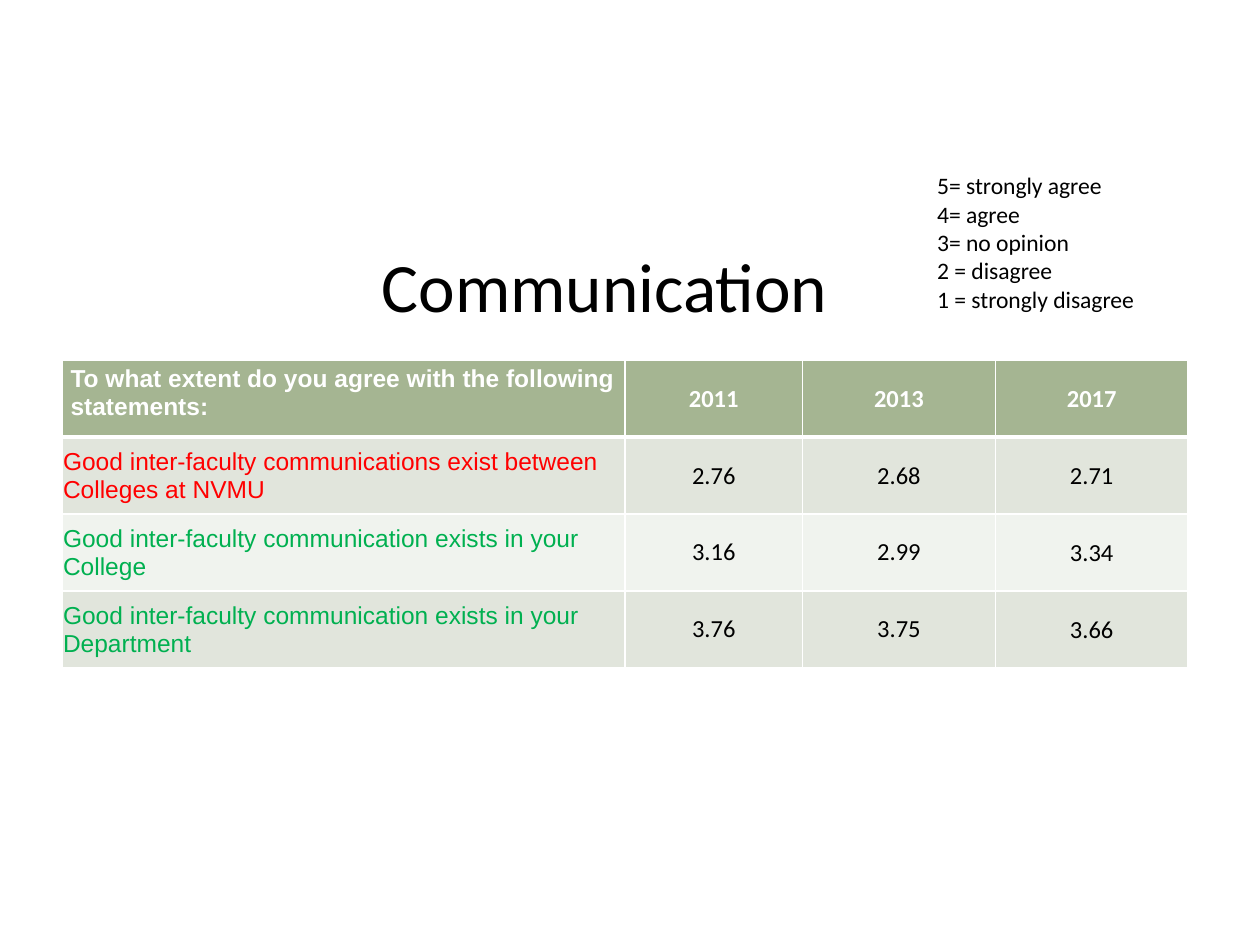
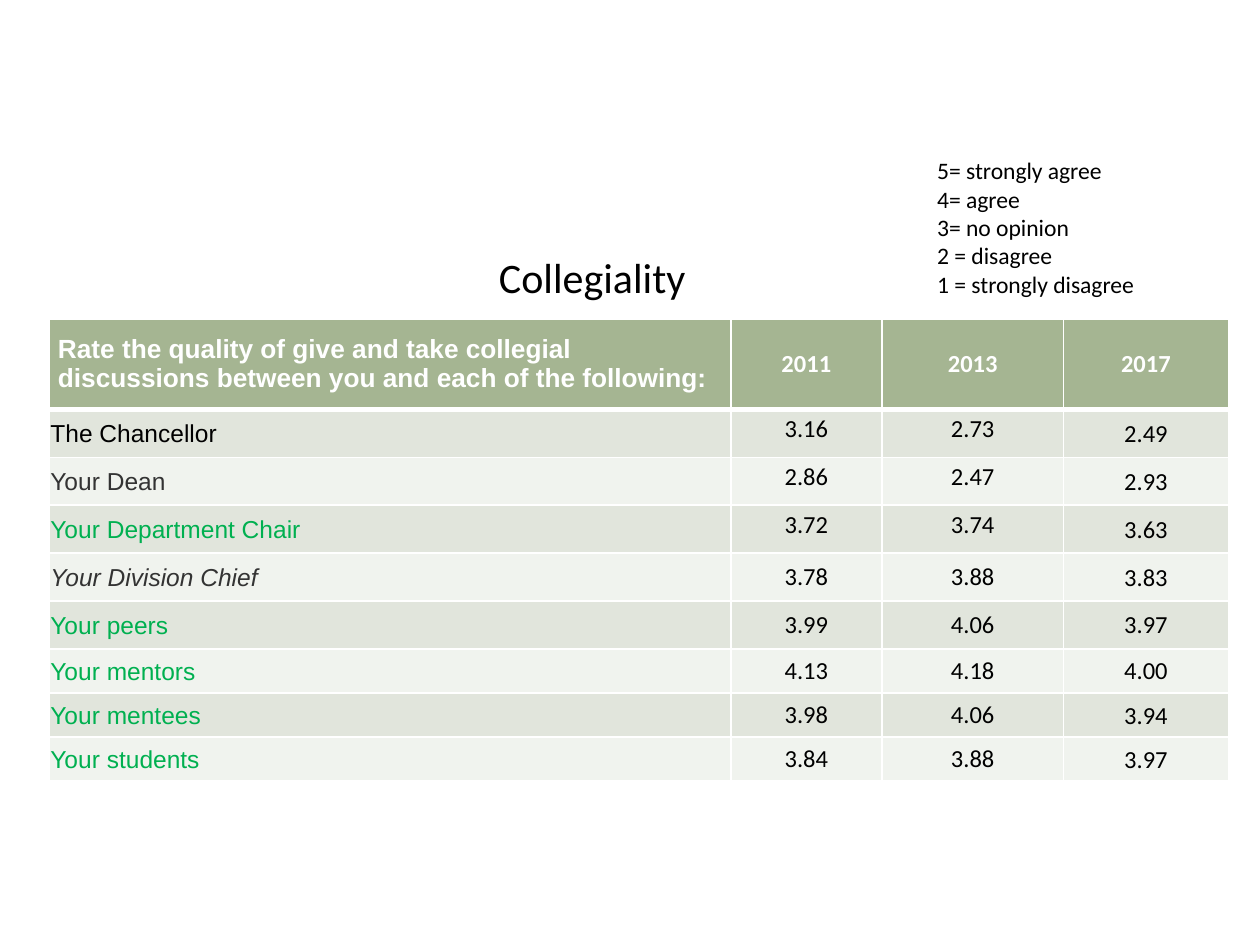
"""Build two survey result slides, each with a title, a rating scale and a score table."""
from dataclasses import dataclass

from lxml.etree import SubElement
from pptx import Presentation
from pptx.dml.color import RGBColor
from pptx.enum.text import MSO_ANCHOR, MSO_AUTO_SIZE, PP_ALIGN
from pptx.oxml.ns import qn
from pptx.util import Inches, Pt

WHITE = RGBColor(0xFF, 0xFF, 0xFF)
BLACK = RGBColor(0x00, 0x00, 0x00)
GRAY = RGBColor(0x33, 0x33, 0x33)
RED = RGBColor(0xFF, 0x00, 0x00)
GREEN = RGBColor(0x00, 0xB0, 0x50)
HEADER_FILL = RGBColor(0xA5, 0xB5, 0x92)
BAND_FILLS = (RGBColor(0xE1, 0xE5, 0xDC), RGBColor(0xF0, 0xF3, 0xEE))

YEARS = ("2011", "2013", "2017")
SCALE = ("5= strongly agree", "4= agree", "3= no opinion",
         "2 = disagree", "1 = strongly disagree")
WIDE = (0.07, 0.04, 0.07, 0.04)
TIGHT = (0.01, 0.01, 0.01, 0)
SIDES = ("left", "top", "right", "bottom")
MIDDLE, TOP = MSO_ANCHOR.MIDDLE, MSO_ANCHOR.TOP


@dataclass(frozen=True)
class Rating:
    label: str
    color: RGBColor
    scores: tuple[str, ...]
    height: float
    italic: bool = False
    anchor: MSO_ANCHOR = MIDDLE


@dataclass(frozen=True)
class Survey:
    title: str
    title_size: float
    title_box: tuple[float, ...]
    scale_top: float
    question: str
    question_size: float
    question_anchor: MSO_ANCHOR
    header_height: float
    table_top: float
    col_widths: tuple[float, ...]
    ratings: tuple[Rating, ...]


@dataclass(frozen=True)
class CellStyle:
    fill: RGBColor
    color: RGBColor
    font: str = "Calibri"
    size: float = 14
    bold: bool = False
    italic: bool = False
    align: PP_ALIGN = PP_ALIGN.CENTER
    anchor: MSO_ANCHOR = MIDDLE
    margins: tuple[float, ...] = WIDE
    top_line: float = 1
    bottom_line: float = 1


SURVEYS = (
    Survey(
        "Communication", 39.6, (0.49, 1.92, 8.62, 0.68), 1.31,
        "To what extent do you agree with the following statements:",
        14, TOP, 0.61, 2.86, (4.47, 1.41, 1.53, 1.53),
        (
            Rating("Good inter-faculty communications exist between Colleges at NVMU",
                   RED, ("2.76", "2.68", "2.71"), 0.61),
            Rating("Good inter-faculty communication exists in your College",
                   GREEN, ("3.16", "2.99", "3.34"), 0.61),
            Rating("Good inter-faculty communication exists in your Department",
                   GREEN, ("3.76", "3.75", "3.66"), 0.61),
        ),
    ),
    Survey(
        "Collegiality", 24, (0.39, 1.93, 8.62, 0.53), 1.19,
        "Rate the quality of give and take collegial discussions "
        "between you and each of the following:",
        15, MIDDLE, 0.72, 2.53, (5.41, 1.2, 1.44, 1.31),
        (
            Rating("The Chancellor", BLACK, ("3.16", "2.73", "2.49"), 0.38, anchor=TOP),
            Rating("Your Dean", GRAY, ("2.86", "2.47", "2.93"), 0.38, anchor=TOP),
            Rating("Your Department Chair", GREEN, ("3.72", "3.74", "3.63"), 0.38, anchor=TOP),
            Rating("Your Division Chief", GRAY, ("3.78", "3.88", "3.83"), 0.38, italic=True),
            Rating("Your peers", GREEN, ("3.99", "4.06", "3.97"), 0.38),
            Rating("Your mentors", GREEN, ("4.13", "4.18", "4.00"), 0.35),
            Rating("Your mentees", GREEN, ("3.98", "4.06", "3.94"), 0.35),
            Rating("Your students", GREEN, ("3.84", "3.88", "3.97"), 0.35),
        ),
    ),
)


def set_attrs(obj, values: dict) -> None:
    for name, value in values.items():
        setattr(obj, name, value)


def format_font(font, name: str, size: float, color: RGBColor,
                bold: bool = False, italic: bool = False) -> None:
    set_attrs(font, {"name": name, "size": Pt(size), "bold": bold, "italic": italic})
    font.color.rgb = color


def add_border(cell, tag: str, width: float) -> None:
    line = SubElement(cell._tc.get_or_add_tcPr(), qn(tag), w=str(Pt(width)))
    fill = SubElement(line, qn("a:solidFill"))
    SubElement(fill, qn("a:srgbClr"), val=str(WHITE))


def write_cell(cell, text: str, style: CellStyle) -> None:
    widths = {"a:lnL": 1, "a:lnR": 1, "a:lnT": style.top_line, "a:lnB": style.bottom_line}
    for tag, width in widths.items():
        add_border(cell, tag, width)
    cell.fill.solid()
    cell.fill.fore_color.rgb = style.fill
    margins = {f"margin_{side}": Inches(m) for side, m in zip(SIDES, style.margins)}
    set_attrs(cell, {"vertical_anchor": style.anchor, **margins})
    p = cell.text_frame.paragraphs[0]
    p.alignment = style.align
    r = p.add_run()
    r.text = text
    format_font(r.font, style.font, style.size, style.color, style.bold, style.italic)


def add_title(s, survey: Survey) -> None:
    sp = s.shapes.title
    box = map(Inches, survey.title_box)
    set_attrs(sp, dict(zip(("left", "top", "width", "height"), box)))
    tf = sp.text_frame
    tf.text = survey.title
    set_attrs(tf, {"auto_size": MSO_AUTO_SIZE.NONE, "vertical_anchor": MIDDLE})
    p = tf.paragraphs[0]
    p.alignment = PP_ALIGN.CENTER
    format_font(p.runs[0].font, "Calibri", survey.title_size, BLACK)


def add_scale(s, top: float) -> None:
    sp = s.shapes.add_textbox(Inches(7.34), Inches(top), Inches(2), Inches(1.24))
    tf = sp.text_frame
    tf.text = "\n".join(SCALE)
    set_attrs(tf, {"word_wrap": True, "auto_size": MSO_AUTO_SIZE.SHAPE_TO_FIT_TEXT})
    for p in tf.paragraphs:
        format_font(p.runs[0].font, "Calibri", 13.5, BLACK)


def add_scores(s, survey: Survey) -> None:
    heights = [survey.header_height, *(rating.height for rating in survey.ratings)]
    table = s.shapes.add_table(
        len(heights), len(survey.col_widths), Inches(survey.title_box[0]),
        Inches(survey.table_top), Inches(sum(survey.col_widths)), Inches(sum(heights)),
    ).table
    for col, width in zip(table.columns, survey.col_widths):
        col.width = Inches(width)
    for row, height in zip(table.rows, heights):
        row.height = Inches(height)

    header = {"fill": HEADER_FILL, "color": WHITE, "bold": True, "bottom_line": 3}
    write_cell(table.cell(0, 0), survey.question, CellStyle(
        **header, font="Arial", size=survey.question_size,
        align=PP_ALIGN.LEFT, anchor=survey.question_anchor))
    for col, year in enumerate(YEARS, 1):
        write_cell(table.cell(0, col), year, CellStyle(**header))

    for row, rating in enumerate(survey.ratings, 1):
        band = {"fill": BAND_FILLS[(row - 1) % 2], "top_line": 3 if row == 1 else 1}
        write_cell(table.cell(row, 0), rating.label, CellStyle(
            **band, color=rating.color, font="Arial", italic=rating.italic,
            align=PP_ALIGN.LEFT, margins=TIGHT))
        for col, score in enumerate(rating.scores, 1):
            latest = col == len(YEARS)
            write_cell(table.cell(row, col), score, CellStyle(
                **band, color=BLACK, anchor=MIDDLE if latest else rating.anchor,
                margins=TIGHT if latest else WIDE))


def main() -> None:
    prs = Presentation()
    set_attrs(prs, {"slide_width": Inches(10), "slide_height": Inches(7.5)})
    for survey in SURVEYS:
        s = prs.slides.add_slide(prs.slide_layouts[5])
        add_title(s, survey)
        add_scores(s, survey)
        add_scale(s, survey.scale_top)
    prs.save("out.pptx")


if __name__ == "__main__":
    main()
